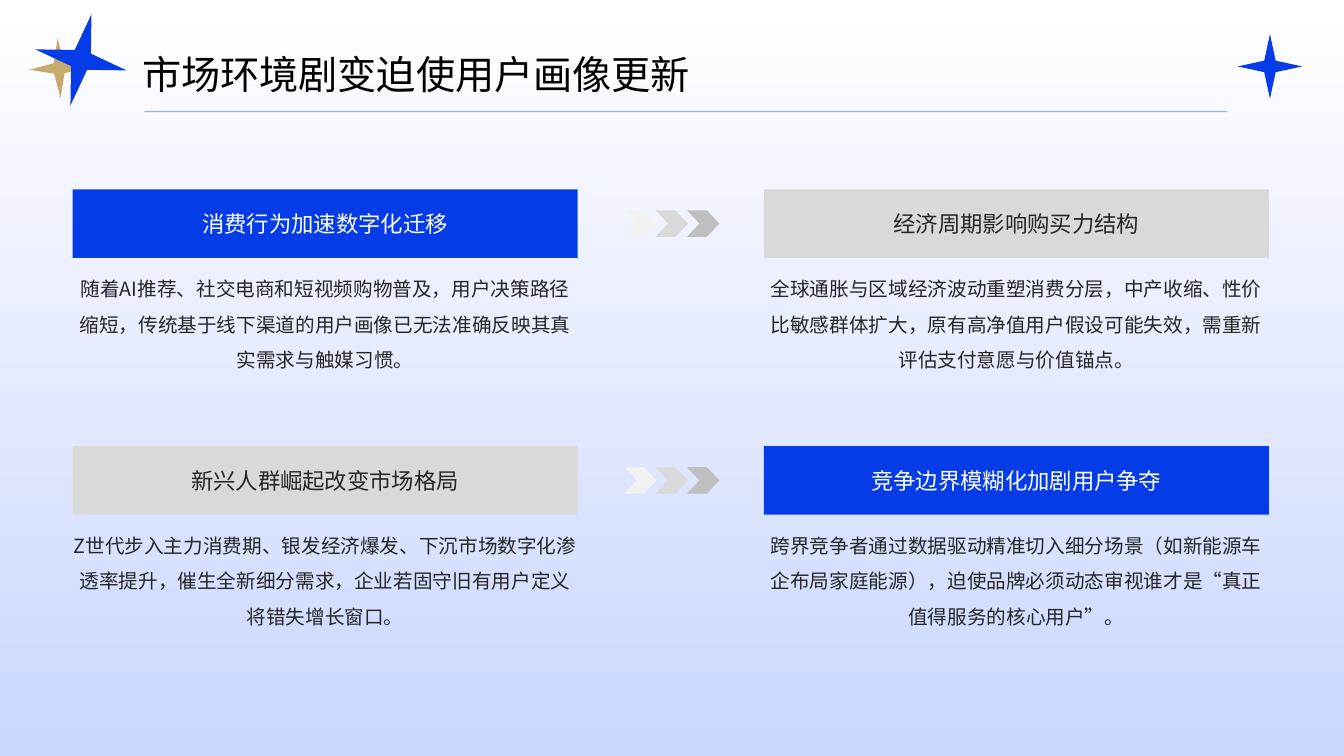
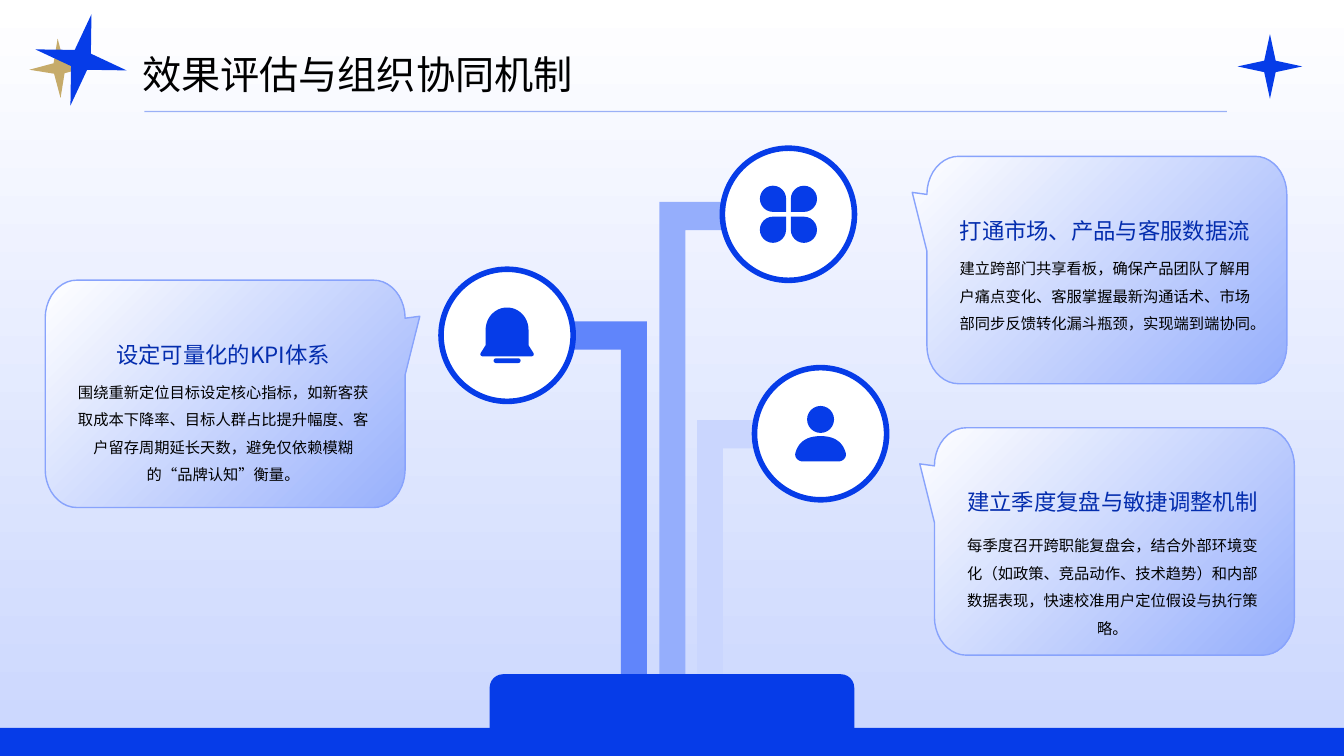
"""Build two slides on market change and on evaluation with teamwork."""
import math
from dataclasses import dataclass
from typing import Any

from lxml import etree
from pptx import Presentation
from pptx import util as u
from pptx.dml import color as dml
from pptx.enum import shapes, text
from pptx.oxml import ns

Point = tuple[float, float]
Cm, Pt = u.Cm, u.Pt
Preset = shapes.MSO_SHAPE

FONT = "Noto Sans CJK SC"
COLORS = {
    "blue": "063CE8", "gold": "C6AB6A", "white": "FFFFFF", "black": "000000",
    "ink": "262626", "gray": "D9D9D9", "light_gray": "F2F2F2", "dark_gray": "BFBFBF",
    "navy": "042DAE", "outline": "88A3FC", "sky": "CAD6FE",
    "strong_pipe": "6085FB", "mid_pipe": "95AEFC",
}
SLIDE_WIDTH, SLIDE_HEIGHT = 33.87, 19.05
CENTER, LEFT = text.PP_ALIGN.CENTER, text.PP_ALIGN.LEFT
TOP, MIDDLE, BOTTOM = text.MSO_ANCHOR.TOP, text.MSO_ANCHOR.MIDDLE, text.MSO_ANCHOR.BOTTOM
NO_MARGINS = {f"margin_{side}": 0 for side in ("left", "top", "right", "bottom")}


@dataclass(frozen=True)
class TextStyle:
    size: float
    color: str
    spacing: float = 1.0
    align: Any = CENTER
    anchor: Any = TOP
    inset: bool = False


TITLE = TextStyle(28, "black", 1.3, LEFT, MIDDLE)
CARD_BODY = TextStyle(14, "ink", 1.5)
BUBBLE_HEADING = TextStyle(16, "navy", 1.2, anchor=BOTTOM, inset=True)
BUBBLE_BODY = TextStyle(10.9, "black", 1.5, inset=True)


@dataclass(frozen=True)
class Star:
    left: float
    top: float
    size: float
    color: str
    rotation: float = 0


@dataclass(frozen=True)
class Card:
    column: int
    row: int
    fill: str
    ink: str
    heading: str
    body: str


@dataclass(frozen=True)
class Pipe:
    outer: float
    end: float
    top: float
    color: str


@dataclass(frozen=True)
class Bubble:
    left: float
    top: float
    body_drop: float
    tail_right: bool
    heading: str
    body: str


STARS = [
    Star(0.74, 0.97, 1.5, "gold", -2.8),
    Star(0.86, 0.33, 2.36, "blue", 13),
    Star(31.19, 0.86, 1.63, "blue"),
]
CARDS = [
    Card(0, 0, "blue", "white", "消费行为加速数字化迁移",
         "随着AI推荐、社交电商和短视频购物普及，用户决策路径缩短，"
         "传统基于线下渠道的用户画像已无法准确反映其真实需求与触媒习惯。"),
    Card(1, 0, "gray", "ink", "经济周期影响购买力结构",
         "全球通胀与区域经济波动重塑消费分层，中产收缩、性价比敏感群体扩大，"
         "原有高净值用户假设可能失效，需重新评估支付意愿与价值锚点。"),
    Card(0, 1, "gray", "ink", "新兴人群崛起改变市场格局",
         "Z世代步入主力消费期、银发经济爆发、下沉市场数字化渗透率提升，"
         "催生全新细分需求，企业若固守旧有用户定义将错失增长窗口。"),
    Card(1, 1, "blue", "white", "竞争边界模糊化加剧用户争夺",
         "跨界竞争者通过数据驱动精准切入细分场景（如新能源车企布局家庭能源），"
         "迫使品牌必须动态审视谁才是“真正值得服务的核心用户”。"),
]
PIPES = [
    Pipe(16.3, 13.72, 8.1, "strong_pipe"),
    Pipe(16.62, 19.2, 5.09, "mid_pipe"),
    Pipe(17.57, 19.43, 10.59, "sky"),
]
BUBBLES = [
    Bubble(1.14, 7.06, 2.24, True, "设定可量化的KPI体系",
           "围绕重新定位目标设定核心指标，如新客获取成本下降率、目标人群占比提升幅度、"
           "客户留存周期延长天数，避免仅依赖模糊的“品牌认知”衡量。"),
    Bubble(23.36, 3.94, 2.24, False, "打通市场、产品与客服数据流",
           "建立跨部门共享看板，确保产品团队了解用户痛点变化、客服掌握最新沟通话术、"
           "市场部同步反馈转化漏斗瓶颈，实现端到端协同。"),
    Bubble(23.55, 10.78, 2.38, False, "建立季度复盘与敏捷调整机制",
           "每季度召开跨职能复盘会，结合外部环境变化（如政策、竞品动作、技术趋势）和"
           "内部数据表现，快速校准用户定位假设与执行策略。"),
]


def rgb(name: str) -> dml.RGBColor:
    return dml.RGBColor.from_string(COLORS[name])


def apply_formats(target: Any, values: dict[str, Any]) -> None:
    for name, value in values.items():
        setattr(target, name, value)


def set_gradient(fill: Any, names: tuple[str, str], angle: float) -> None:
    fill.gradient()
    fill.gradient_angle = angle
    for stop, name in zip(fill.gradient_stops, names):
        stop.color.rgb = rgb(name)


def paint(shape: Any, fill: str | None, line: str | None = None, width: float = 1) -> Any:
    shape.shadow.inherit = False
    if fill:
        shape.fill.solid()
        shape.fill.fore_color.rgb = rgb(fill)
    if line:
        shape.line.color.rgb = rgb(line)
        shape.line.width = Pt(width)
    else:
        shape.line.fill.background()
    return shape


def add_preset(slide: Any, kind: Any, box: tuple[float, ...], fill: str, **line: Any) -> Any:
    return paint(slide.shapes.add_shape(kind, *map(Cm, box)), fill, **line)


def add_outline(slide: Any, points: list[Point], fill: str | None, **line: Any) -> Any:
    corners = [(Cm(x), Cm(y)) for x, y in points]
    builder = slide.shapes.build_freeform(*corners[0])
    builder.add_line_segments(corners[1:], close=True)
    return paint(builder.convert_to_shape(), fill, **line)


def write(shape: Any, content: str, style: TextStyle) -> None:
    frame = shape.text_frame
    formats = {"word_wrap": True, "auto_size": text.MSO_AUTO_SIZE.NONE,
               "vertical_anchor": style.anchor}
    apply_formats(frame, formats if style.inset else formats | NO_MARGINS)
    paragraph = frame.paragraphs[0]
    apply_formats(paragraph, {"alignment": style.align, "line_spacing": style.spacing})
    run = paragraph.add_run()
    run.text = content
    apply_formats(run.font, {"size": Pt(style.size), "name": FONT})
    run.font.color.rgb = rgb(style.color)
    etree.SubElement(run._r.get_or_add_rPr(), ns.qn("a:ea"), typeface=FONT)


def add_text(slide: Any, box: tuple[float, ...], content: str, style: TextStyle) -> None:
    write(slide.shapes.add_textbox(*map(Cm, box)), content, style)


def add_slide(presentation: Any, title: str) -> Any:
    slide = presentation.slides.add_slide(presentation.slide_layouts[5])
    heading = slide.shapes.title
    box = {"left": 3.58, "top": 0.94, "width": 20.07, "height": 1.5}
    apply_formats(heading, {name: Cm(value) for name, value in box.items()})
    write(heading, title, TITLE)
    for star in STARS:
        shape = add_preset(slide, Preset.STAR_4_POINT,
                           (star.left, star.top, star.size, star.size), star.color)
        shape.rotation = star.rotation
    rule = slide.shapes.add_connector(shapes.MSO_CONNECTOR.STRAIGHT,
                                      Cm(3.64), Cm(2.81), Cm(30.92), Cm(2.81))
    rule.line.color.rgb = rgb("blue")
    rule.line.width = Pt(0.75)
    properties = rule._element.spPr
    tint = properties.find(".//" + ns.qn("a:srgbClr"))
    etree.SubElement(tint, ns.qn("a:alpha"), val="38000")
    etree.SubElement(properties, ns.qn("a:effectLst"))
    return slide


def add_card(slide: Any, card: Card) -> None:
    left, top, width = 1.83 + 17.42 * card.column, 4.77 + 6.47 * card.row, 12.73
    banner = add_preset(slide, Preset.RECTANGLE, (left, top, width, 1.73), card.fill)
    write(banner, card.heading, TextStyle(16, card.ink, anchor=MIDDLE))
    add_text(slide, (left, top + 1.92, width, 3.51), card.body, CARD_BODY)


def add_chevrons(slide: Any, top: float) -> None:
    for index, fill in reversed(list(enumerate(("light_gray", "gray", "dark_gray")))):
        box = (15.73 + 0.79 * index, top, 0.82, 0.67)
        add_preset(slide, Preset.CHEVRON, box, fill).adjustments[0] = 0.477


def add_pipe(slide: Any, pipe: Pipe) -> None:
    inner = pipe.outer + math.copysign(0.65, pipe.end - pipe.outer)
    elbow, floor = pipe.top + 0.71, 18.34
    add_outline(slide, [(pipe.outer, pipe.top), (pipe.end, pipe.top), (pipe.end, elbow),
                        (inner, elbow), (inner, floor), (pipe.outer, floor)], pipe.color)


def add_bubble(slide: Any, bubble: Bubble) -> None:
    width, height, radius_x, radius_y = 9.07, 5.73, 0.8, 0.96
    right, bottom = width - radius_x, height - radius_y
    points: list[Point] = []
    for x, y, start in ((right, radius_y, -90), (right, bottom, 0),
                        (radius_x, bottom, 90), (radius_x, radius_y, 180)):
        if start == 180:
            points += [(0, 2.39), (-0.37, 0.91)]
        angles = [math.radians(start + 9 * step) for step in range(11)]
        points += [(x + radius_x * math.cos(a), y + radius_y * math.sin(a)) for a in angles]
    if bubble.tail_right:
        points = [(width - x, y) for x, y in points]
    placed = [(bubble.left + x, bubble.top + y) for x, y in points]
    shape = add_outline(slide, placed, None, line="outline")
    set_gradient(shape.fill, ("white", "mid_pipe"), 315)
    text_left = bubble.left + 0.56
    add_text(slide, (text_left, bubble.top + bubble.body_drop, 7.85, 2.87),
             bubble.body, BUBBLE_BODY)
    add_text(slide, (text_left, bubble.top + 0.15, 7.85, 2.18), bubble.heading, BUBBLE_HEADING)


def curve(*controls: Point) -> list[Point]:
    points = []
    for step in range(13):
        t = step / 12
        weights = ((1 - t) ** 3, 3 * t * (1 - t) ** 2, 3 * t * t * (1 - t), t ** 3)
        x, y = (sum(w * p[axis] for w, p in zip(weights, controls)) for axis in (0, 1))
        points.append((x, y))
    return points


def add_symmetric(slide: Any, x: float, y: float, half: list[Point]) -> None:
    points = half + [(-dx, dy) for dx, dy in reversed(half)]
    add_outline(slide, [(x + dx, y + dy) for dx, dy in points], "blue")


def add_bell(slide: Any, x: float, y: float) -> None:
    dome = curve((0, -0.7), (0.3, -0.7), (0.54, -0.45), (0.54, -0.14))
    rim = curve((0.66, 0.44), (0.69, 0.49), (0.66, 0.53), (0.61, 0.53))
    add_symmetric(slide, x, y, dome + [(0.54, 0.25)] + rim)
    bar = add_preset(slide, Preset.ROUNDED_RECTANGLE, (x - 0.34, y + 0.58, 0.68, 0.12), "blue")
    bar.adjustments[0] = 0.5


def add_petals(slide: Any, x: float, y: float) -> None:
    size, offset = 0.66, 0.39
    for side_x, side_y, rotation in ((-1, 1, 0), (-1, -1, 90), (1, -1, 180), (1, 1, 270)):
        left, top = x + side_x * offset - size / 2, y + side_y * offset - size / 2
        petal = add_preset(slide, Preset.TEAR, (left, top, size, size), "blue")
        petal.rotation = rotation


def add_person(slide: Any, x: float, y: float) -> None:
    add_preset(slide, Preset.OVAL, (x - 0.34, y - 0.7, 0.68, 0.68), "blue")
    shoulder = curve((0, 0.06), (0.42, 0.06), (0.57, 0.27), (0.63, 0.47))
    add_symmetric(slide, x, y, shoulder + curve((0.63, 0.47), (0.67, 0.58), (0.58, 0.7), (0.44, 0.7)))


def build_market_slide(presentation: Any) -> None:
    slide = add_slide(presentation, "市场环境剧变迫使用户画像更新")
    for card in CARDS:
        add_card(slide, card)
    for row in range(2):
        add_chevrons(slide, 5.3 + 6.47 * row)


def build_evaluation_slide(presentation: Any) -> None:
    slide = add_slide(presentation, "效果评估与组织协同机制")
    add_preset(slide, Preset.RECTANGLE, (0, 18.34, SLIDE_WIDTH, 0.71), "blue")
    for pipe in PIPES:
        add_pipe(slide, pipe)
    diameter = 3.33
    for x, y, add_icon in ((19.87, 5.4, add_petals), (20.68, 10.93, add_person),
                           (12.78, 8.45, add_bell)):
        box = (x - diameter / 2, y - diameter / 2, diameter, diameter)
        add_preset(slide, Preset.OVAL, box, "white", line="blue", width=4)
        add_icon(slide, x, y)
    add_preset(slide, Preset.ROUNDED_RECTANGLE, (12.34, 16.99, 9.19, 2.03), "blue")
    for bubble in BUBBLES:
        add_bubble(slide, bubble)


def main() -> None:
    presentation = Presentation()
    presentation.slide_width, presentation.slide_height = Cm(SLIDE_WIDTH), Cm(SLIDE_HEIGHT)
    set_gradient(presentation.slide_master.background.fill, ("white", "sky"), 270)
    build_market_slide(presentation)
    build_evaluation_slide(presentation)
    presentation.save("out.pptx")


if __name__ == "__main__":
    main()
